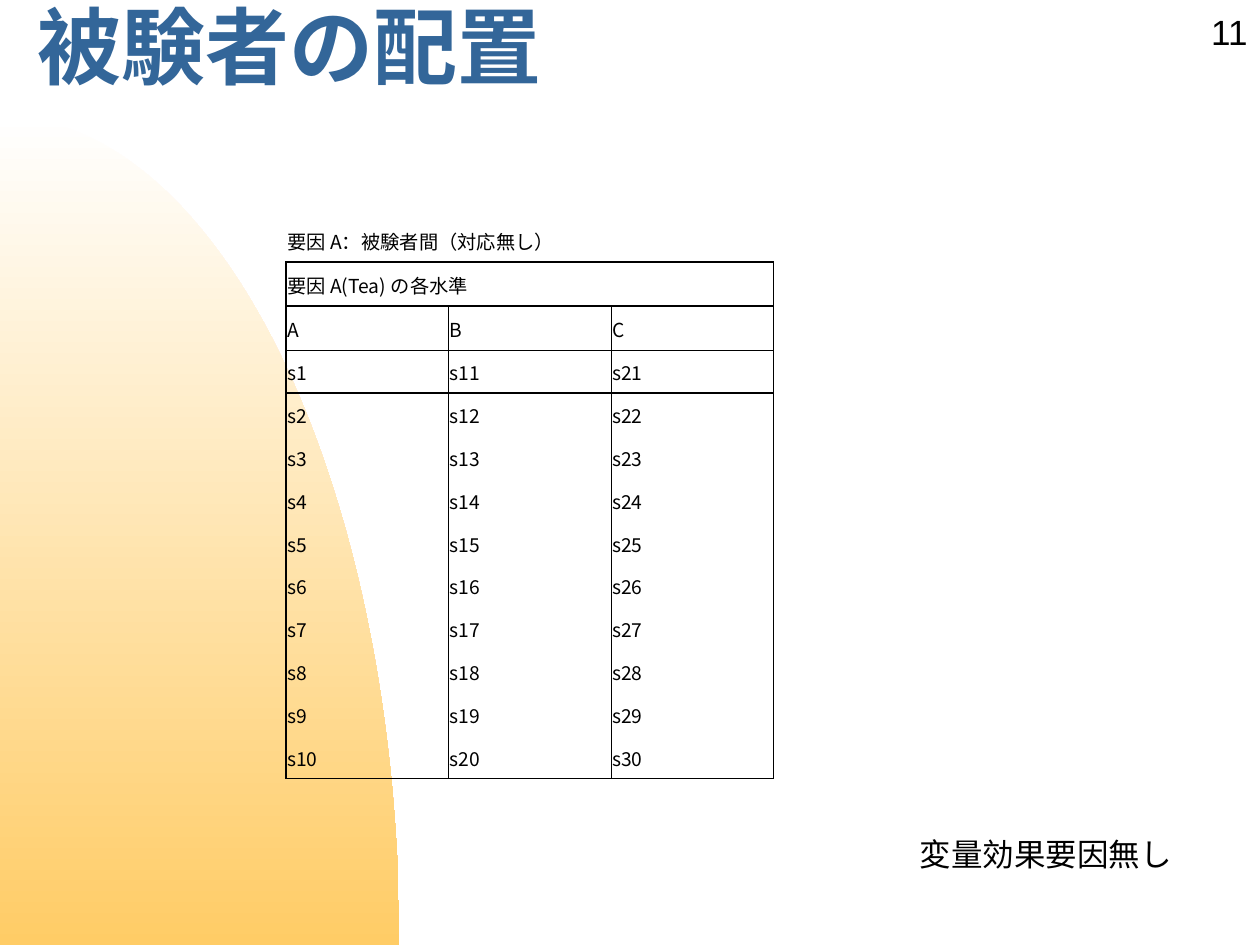
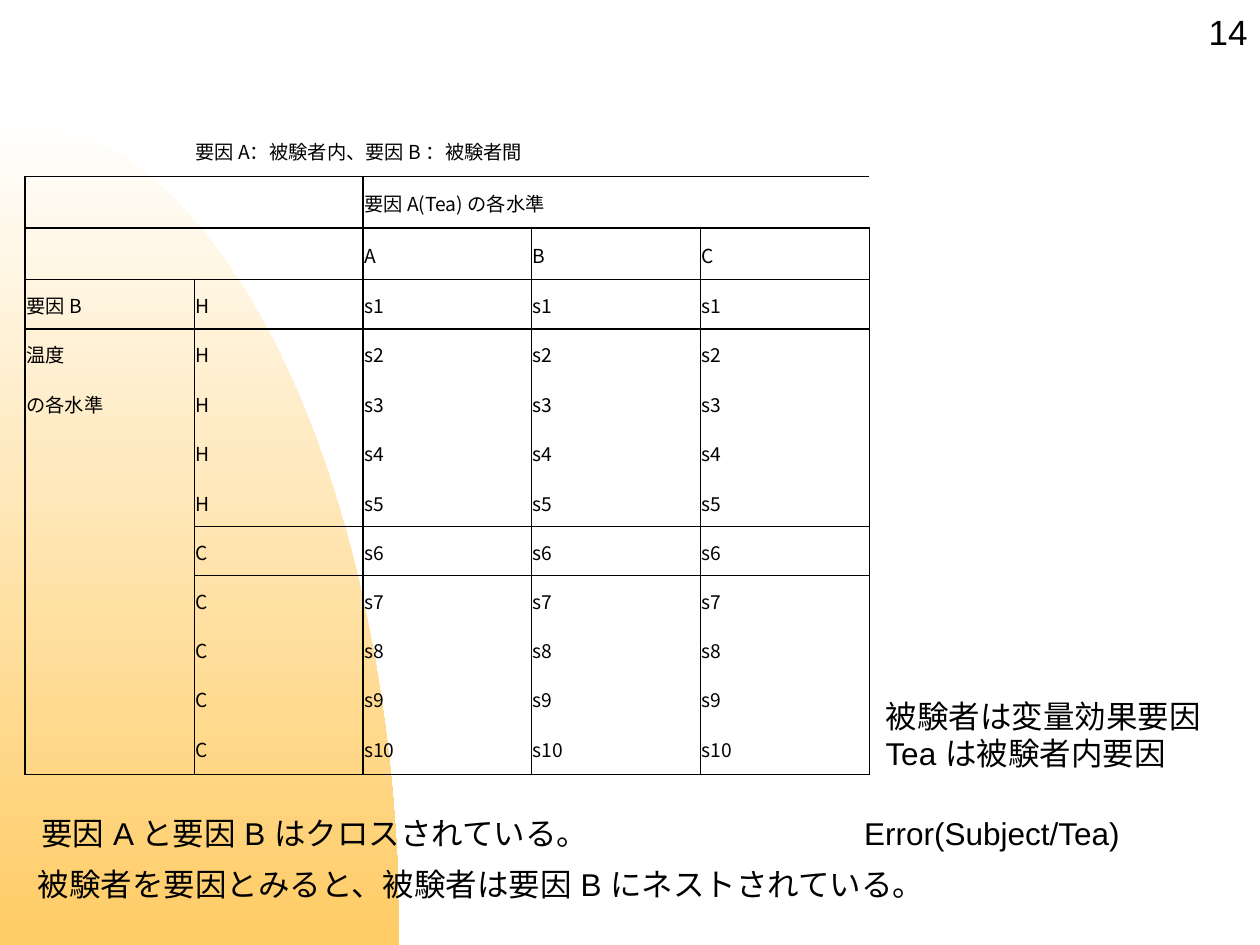
import math

import lxml.etree
import pptx
import pptx.dml.color
import pptx.enum.text
import pptx.oxml.ns
import pptx.util

Inches = pptx.util.Inches
Pt = pptx.util.Pt
Align = pptx.enum.text.PP_ALIGN
Anchor = pptx.enum.text.MSO_ANCHOR
qn = pptx.oxml.ns.qn

BLACK, WHITE, BLUE, GOLD = "000000", "FFFFFF", "336699", "FFCC66"
SANS, CJK = "Arial", "Noto Sans CJK JP"
PLAIN = "{2D5ABB26-0587-4C30-8999-92F81FD0307C}"
THICK, THIN = 1, 0.5
WIDE, HIGH = 10, 7.5


def tint(code):
    """Turn a hex string into a colour."""
    return pptx.dml.color.RGBColor.from_string(code)


def write(frame, text, size=18, face=SANS, color=BLACK, bold=False,
          align=Align.LEFT, anchor=Anchor.TOP, wrap=True, space=None):
    """Put formatted text into a text frame; a vertical tab breaks the line."""
    frame.word_wrap = wrap
    frame.vertical_anchor = anchor
    para = frame.paragraphs[0]
    para.text = text
    para.alignment = align
    if space:
        para.line_spacing = space
    for run in para.runs:
        font = run.font
        font.size, font.name, font.bold = Pt(size), face, bold
        font.color.rgb = tint(color)
        east = lxml.etree.SubElement(font._element, qn("a:ea"))
        east.set("typeface", face)


def label(slide, text, left, top, width, height, **style):
    """Add a text box."""
    box = slide.shapes.add_textbox(
        Inches(left), Inches(top), Inches(width), Inches(height))
    write(box.text_frame, text, **style)


def note(slide, text, left, top, width, height=0.4):
    """Add a remark beside or below a table."""
    label(slide, text, left, top, width, height, wrap=False)


def curve(slide, wide=3.17, high=6.58, steps=90):
    """Add the quarter ellipse with its gradient at the lower left."""
    turns = [math.pi / 2 * i / steps for i in range(steps + 1)]
    rim = [(Inches(wide * math.sin(t)), Inches(HIGH - high * math.cos(t)))
           for t in turns]
    pen = slide.shapes.build_freeform(*rim[0])
    pen.add_line_segments(rim[1:] + [(0, Inches(HIGH))], close=True)
    shape = pen.convert_to_shape()
    shape.shadow.inherit = False
    shape.line.fill.background()
    shape.fill.gradient()
    shape.fill.gradient_angle = 270
    for stop, code, place in zip(shape.fill.gradient_stops, (WHITE, GOLD), (0, 1)):
        stop.color.rgb = tint(code)
        stop.position = place


def page(deck, number):
    """Add a slide with the curve and its page number."""
    slide = deck.slides.add_slide(deck.slide_layouts[6])
    curve(slide)
    label(slide, str(number), 9.11, 0, 0.89, 0.5, size=20,
          align=Align.RIGHT, anchor=Anchor.MIDDLE)
    return slide


def frame(rims, top, left, low, right, l=THICK, r=THICK, t=THICK, b=THICK):
    """Note the border widths around a block of cells."""
    for row in range(top, low + 1):
        rims.setdefault((row, left), {})["L"] = l
        rims.setdefault((row, right), {})["R"] = r
    for col in range(left, right + 1):
        rims.setdefault((top, col), {})["T"] = t
        rims.setdefault((low, col), {})["B"] = b


def bars(rims, top, low, first, last, **width):
    """Frame each column of a band, thick outside and thin between."""
    for col in range(first, last + 1):
        frame(rims, top, col, low, col, l=THICK if col == first else THIN,
              r=THICK if col == last else THIN, **width)


def edge(cell, widths):
    """Draw the borders of one cell."""
    props = cell._tc.get_or_add_tcPr()
    for side in "LRTB":
        if side in widths:
            line = lxml.etree.SubElement(
                props, qn("a:ln" + side), w=str(Pt(widths[side])))
            fill = lxml.etree.SubElement(line, qn("a:solidFill"))
            lxml.etree.SubElement(fill, qn("a:srgbClr"), val=BLACK)


def grid(slide, left, top, cols, rows, texts, spans, rims):
    """Add a table from texts, merged spans and border widths."""
    holder = slide.shapes.add_table(
        len(rows), len(cols), Inches(left), Inches(top),
        Inches(sum(cols)), Inches(sum(rows)))
    table = holder.table
    table.first_row = table.horz_banding = False
    table._tbl.tblPr.find(qn("a:tableStyleId")).text = PLAIN
    for col, width in zip(table.columns, cols):
        col.width = Inches(width)
    for row, height in zip(table.rows, rows):
        row.height = Inches(height)
    for row, first, last in spans:
        table.cell(row, first).merge(table.cell(row, last))
    for row in range(len(rows)):
        for col in range(len(cols)):
            cell = table.cell(row, col)
            cell.margin_left = cell.margin_right = cell.margin_top = Inches(0.01)
            cell.margin_bottom = 0
            cell.vertical_anchor = Anchor.MIDDLE
            edge(cell, rims.get((row, col), {}))
            cell.fill.background()
            if (row, col) in texts:
                fill_in(cell, texts[row, col])


def fill_in(cell, text):
    """Write the text of one table cell."""
    write(cell.text_frame, text, size=11, face=CJK, anchor=Anchor.MIDDLE, wrap=None)


def between(deck):
    """Build the slide on the layout between subjects."""
    slide = page(deck, 11)
    label(slide, "被験者の配置", 0.2, 0, 9.45, 0.91, size=48, color=BLUE,
          bold=True, anchor=Anchor.MIDDLE, space=0.7)
    texts = {(1, 1): "要因 A：被験者間（対応無し）", (2, 1): "要因 A(Tea) の各水準"}
    for col, level in enumerate("ABC", 1):
        texts[3, col] = level
        for i in range(1, 11):
            texts[3 + i, col] = f"s{10 * (col - 1) + i}"
    rims = {}
    frame(rims, 2, 1, 2, 3)
    bars(rims, 3, 3, 1, 3)
    bars(rims, 4, 13, 1, 3)
    rows = [0.34] + [0.35] * 3 + [0.34] * 12
    grid(slide, 0.98, 1.39, [1.29] * 5, rows, texts, [(1, 1, 3), (2, 1, 3)], rims)
    note(slide, "変量効果要因無し", 7.2, 6.58, 2.22)


def mixed(deck):
    """Build the slide on the layout within and between subjects."""
    slide = page(deck, 14)
    texts = {(0, 1): "要因 A：被験者内、要因 B ：被験者間",
             (1, 2): "要因 A(Tea) の各水準",
             (3, 0): "要因 B", (4, 0): "温度", (5, 0): "の各水準"}
    for i in range(1, 11):
        texts[2 + i, 1] = "H" if i <= 5 else "C"
    for col, level in enumerate("ABC", 2):
        texts[2, col] = level
        for i in range(1, 11):
            texts[2 + i, col] = f"s{i}"
    rims = {}
    frame(rims, 1, 0, 2, 1)
    frame(rims, 1, 2, 1, 4)
    bars(rims, 2, 2, 2, 4)
    frame(rims, 3, 0, 12, 0, r=THIN)
    for top, low, width in ((3, 7, {"b": THIN}), (8, 12, {"t": THIN})):
        frame(rims, top, 1, low, 1, l=THIN, **width)
        bars(rims, top, low, 2, 4, **width)
    rows = [0.41] * 3 + [0.39] * 2 + [0.4] + [0.39] * 6 + [0.41]
    grid(slide, 0.2, 0.99, [1.34] * 5, rows, texts, [(0, 1, 4), (1, 2, 4)], rims)
    note(slide, "被験者を要因とみると、被験者は要因 B にネストされている。", 0.2, 6.82, 7.26)
    note(slide, "要因 A と要因 B はクロスされている。", 0.23, 6.41, 4.58)
    note(slide, "Error(Subject/Tea)", 6.76, 6.41, 2.25)
    note(slide, "被験者は変量効果要因\vTea は被験者内要因", 6.93, 5.48, 2.73, 0.71)


def main():
    """Build and save the deck."""
    deck = pptx.Presentation()
    deck.slide_width, deck.slide_height = Inches(WIDE), Inches(HIGH)
    between(deck)
    mixed(deck)
    deck.save("out.pptx")


if __name__ == "__main__":
    main()
